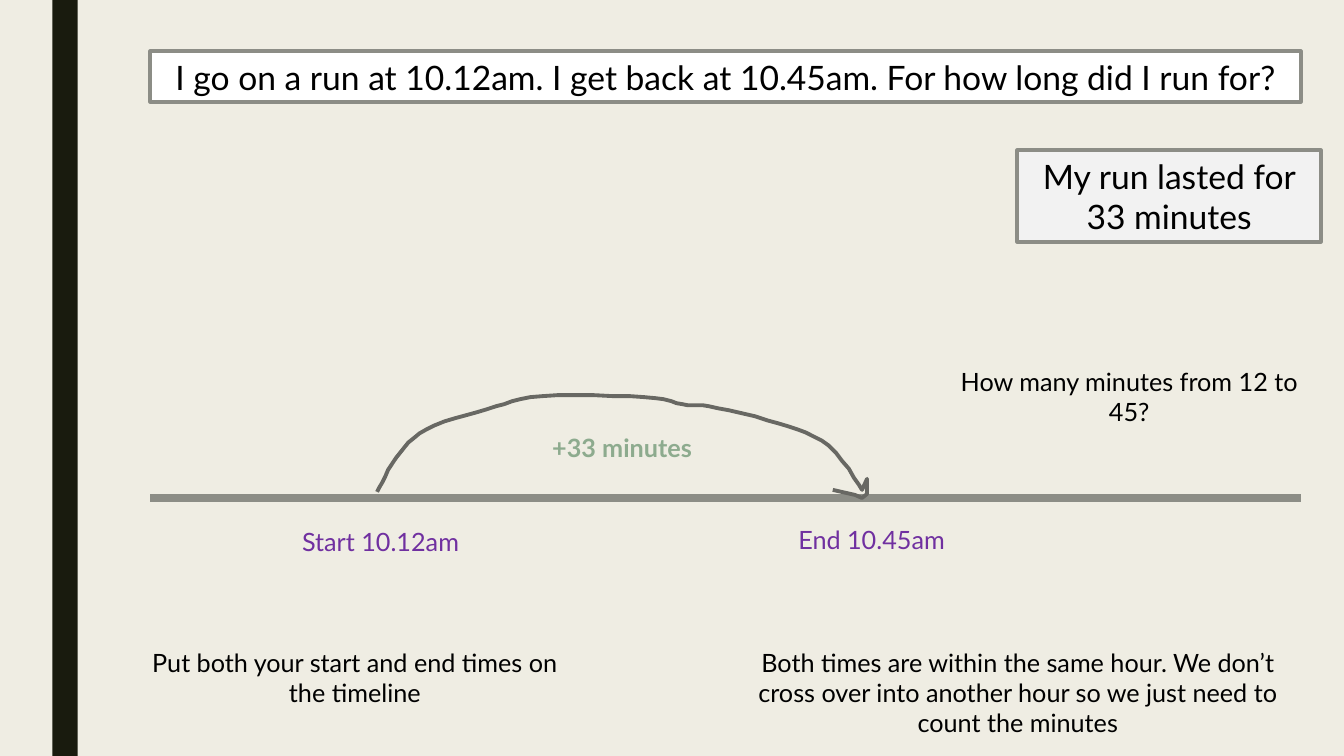
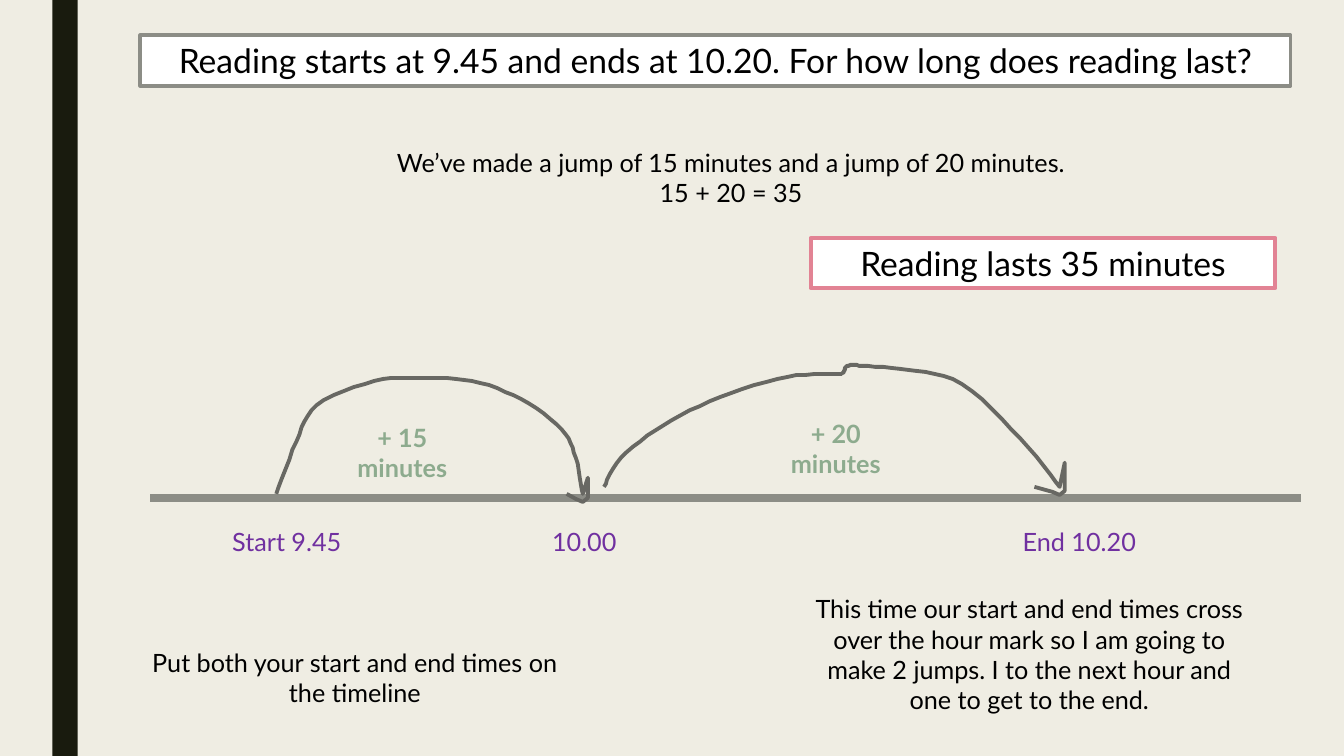
"""Build two timeline slides on working out how long an activity lasts."""
from lxml.etree import SubElement
from pptx import Presentation
from pptx.dml.color import RGBColor
from pptx.enum.shapes import MSO_CONNECTOR as Connector, MSO_SHAPE as Shape
from pptx.enum.text import MSO_ANCHOR as Anchor, PP_ALIGN as Align
from pptx.oxml.ns import qn
from pptx.util import Pt

PX = 9144
WIDTH, HEIGHT = 1333, 750
TIMELINE_LEFT, TIMELINE_RIGHT, TIMELINE_Y = 149, 1290, 494
TIME_WIDTH, TIME_HEIGHT = 183, 40
CURVE_STEPS = 6
FONT = "Lato"

CREAM = RGBColor(0xEF, 0xED, 0xE3)
DARK = RGBColor(0x19, 0x1B, 0x0E)
GREY = RGBColor(0x8C, 0x8D, 0x86)
INK = RGBColor(0x68, 0x68, 0x63)
PINK = RGBColor(0xE2, 0x83, 0x94)
PURPLE = RGBColor(0x70, 0x30, 0xA0)
GREEN = RGBColor(0x8D, 0xAB, 0x8E)
PALE = RGBColor(0xF2, 0xF2, 0xF2)
WHITE = RGBColor(0xFF, 0xFF, 0xFF)
BLACK = RGBColor(0x00, 0x00, 0x00)

START_HINT = ("Put both your start and end times on the timeline", (124, 637, 456, 71))

LESSONS = [
    {
        "question": "I go on a run at 10.12am. I get back at 10.45am. For how long did I run for?",
        "question_at": (149, 51, 1141, 50),
        "answer": "My run lasted for 33 minutes",
        "answer_at": (1009, 149, 301, 91),
        "answer_colours": (PALE, GREY),
        "times": [("Start 10.12am", 286, 517), ("End 10.45am", 773, 515)],
        "jump_labels": [("+33 minutes", (438, 424, 358, 40))],
        "hints": [
            START_HINT,
            ("Both times are within the same hour. We don’t cross over into another hour "
             "so we just need to count the minutes", (720, 637, 579, 101)),
            ("How many minutes from 12 to 45?", (941, 358, 358, 71)),
        ],
        "jumps": [
            {"rise": 11, "reach": 29, "curve": [
                (374, 488), (393, 454), (423, 426), (483, 406), (538, 393), (639, 394),
                (682, 402), (703, 403), (772, 420), (822, 442), (855, 486)]},
        ],
    },
    {
        "question": "Reading starts at 9.45 and ends at 10.20. For how long does reading last?",
        "question_at": (139, 35, 1141, 50),
        "answer": "Reading lasts 35 minutes",
        "answer_at": (804, 236, 461, 50),
        "answer_colours": (WHITE, PINK),
        "times": [("Start 9.45", 193, 517), ("10.00", 488, 517), ("End 10.20", 979, 517)],
        "jump_labels": [
            ("+ 15 minutes", (336, 414, 126, 71)),
            ("+ 20 minutes", (766, 410, 126, 71)),
        ],
        "hints": [
            START_HINT,
            ("This time our start and end times cross over the hour mark so I am going to "
             "make 2 jumps. I to the next hour and one to get to the end.", (793, 584, 456, 131)),
            ("We’ve made a jump of 15 minutes and a jump of 20 minutes.\n15 + 20 = 35",
             (171, 141, 1108, 71)),
        ],
        "jumps": [
            {"rise": 16, "reach": 16, "curve": [
                (274, 490), (294, 438), (314, 402), (371, 378), (419, 375), (468, 378),
                (517, 396), (557, 426), (571, 454), (578, 490)]},
            {"rise": 24, "reach": 25, "curve": [
                (599, 483), (616, 454), (658, 422), (714, 394), (781, 374), (827, 371),
                (836, 370), (839, 364), (845, 362), (856, 363), (901, 367), (954, 381),
                (1012, 435), (1051, 483)]},
        ],
    },
]


def write(shape, text, size=18, colour=BLACK, bold=False):
    frame = shape.text_frame
    frame.word_wrap = True
    frame.text = text
    for paragraph in frame.paragraphs:
        paragraph.alignment = Align.CENTER
        paragraph.font.name = FONT
        paragraph.font.size = Pt(size)
        paragraph.font.bold = bold
        paragraph.font.color.rgb = colour


def paint(shape, fill, outline):
    shape.fill.solid()
    shape.fill.fore_color.rgb = fill
    shape.line.color.rgb = outline
    shape.line.width = Pt(2.75)


prs = Presentation()
prs.slide_width, prs.slide_height = WIDTH * PX, HEIGHT * PX
master = prs.slide_master
master.background.fill.solid()
master.background.fill.fore_color.rgb = CREAM
slides = [prs.slides.add_slide(prs.slide_layouts[5]) for lesson in LESSONS]

band = slides[0].shapes.add_shape(Shape.RECTANGLE, 52 * PX, 0, 25 * PX, HEIGHT * PX)
band.shadow.inherit = False
band.fill.solid()
band.fill.fore_color.rgb = DARK
band.line.fill.background()
band.element.nvSpPr.cNvPr.set("id", "20")
master.shapes.element.insert(2, band.element)

for slide, lesson in zip(slides, LESSONS):
    shapes = slide.shapes

    question = shapes.title
    question.left, question.top, question.width, question.height = (
        length * PX for length in lesson["question_at"])
    write(question, lesson["question"], 24)
    question.text_frame.vertical_anchor = Anchor.MIDDLE
    paint(question, WHITE, GREY)

    timeline = shapes.add_connector(
        Connector.STRAIGHT, TIMELINE_LEFT * PX, TIMELINE_Y * PX, TIMELINE_RIGHT * PX, TIMELINE_Y * PX)
    timeline.line.color.rgb = GREY
    timeline.line.width = Pt(6)
    SubElement(timeline.element.spPr, qn("a:effectLst"))

    for jump in lesson["jumps"]:
        curve = jump["curve"]
        padded = [curve[0], *curve, curve[-1]]
        points = []
        for before, start, end, after in zip(padded, padded[1:], padded[2:], padded[3:]):
            for step in range(CURVE_STEPS):
                t = step / CURVE_STEPS
                points.append(tuple(
                    b + ((c - a) * t + (2 * a - 5 * b + 4 * c - d) * t ** 2
                         + (3 * b - a - 3 * c + d) * t ** 3) / 2
                    for a, b, c, d in zip(before, start, end, after)))
        tip_x, tip_y = curve[-1]
        arrowhead = [(0, 0), (5, -jump["rise"]), (5, 4), (0, 8), (-7, 5), (-jump["reach"], 0)]
        points += [(tip_x + x, tip_y + y) for x, y in arrowhead]

        builder = shapes.build_freeform(*points[0], scale=PX)
        builder.add_line_segments(points[1:], close=False)
        arc = builder.convert_to_shape()
        arc.shadow.inherit = False
        arc.fill.background()
        arc.line.color.rgb = INK
        arc.line.width = Pt(2.75)

    labels = [(text, (left, top, TIME_WIDTH, TIME_HEIGHT), PURPLE, False)
              for text, left, top in lesson["times"]]
    labels += [(text, place, GREEN, True) for text, place in lesson["jump_labels"]]
    labels += [(text, place, BLACK, False) for text, place in lesson["hints"]]
    for text, place, colour, bold in labels:
        label = shapes.add_textbox(*(length * PX for length in place))
        write(label, text, colour=colour, bold=bold)

    answer = shapes.add_shape(Shape.RECTANGLE, *(length * PX for length in lesson["answer_at"]))
    answer.shadow.inherit = False
    write(answer, lesson["answer"], 24)
    paint(answer, *lesson["answer_colours"])

prs.save("out.pptx")
